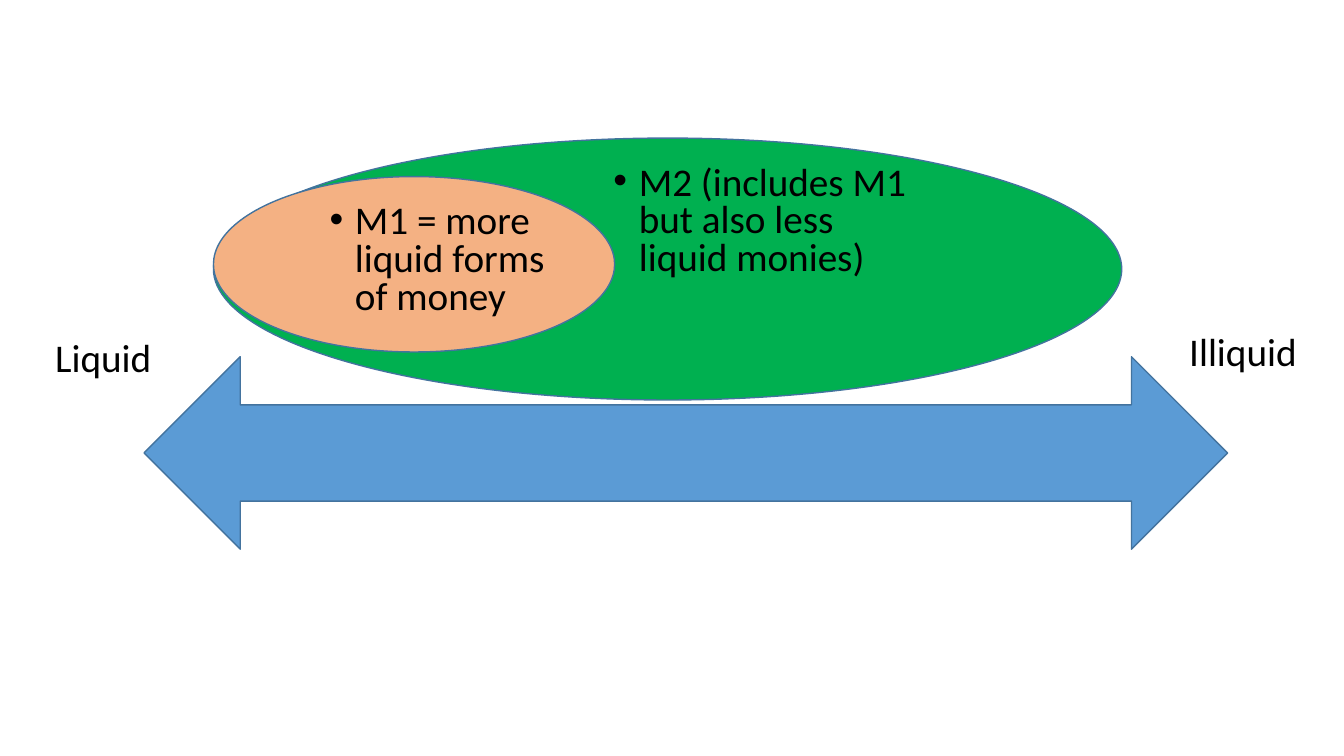
import pptx
import pptx.util
import pptx.dml.color
import pptx.enum.shapes
import pptx.enum.text
import pptx.oxml.ns
import lxml.etree
from dataclasses import dataclass

Cm, Pt = pptx.util.Cm, pptx.util.Pt
RGB = pptx.dml.color.RGBColor.from_string
SHAPE = pptx.enum.shapes.MSO_SHAPE


@dataclass
class Theme:
    font: str = "Calibri"
    size: int = 28
    text: str = "000000"
    outline: str = "43739E"
    m1: str = "F4B183"
    m2: str = "00B050"
    arrow: str = "5B9BD5"


theme = Theme()


def write_text(tf, text, bullet=False, spacing=None, wrap=True):
    tf.word_wrap = wrap
    tf.auto_size = pptx.enum.text.MSO_AUTO_SIZE.NONE
    tf.vertical_anchor = pptx.enum.text.MSO_ANCHOR.TOP
    p = tf.paragraphs[0]
    p.text = text
    if bullet:
        pPr = p._p.get_or_add_pPr()
        pPr.set("marL", str(Cm(0.64)))
        pPr.set("indent", str(-Cm(0.64)))
        bu_font = lxml.etree.SubElement(pPr, pptx.oxml.ns.qn("a:buFont"))
        bu_font.set("typeface", "Arial")
        lxml.etree.SubElement(pPr, pptx.oxml.ns.qn("a:buChar")).set("char", "•")
    p.alignment = pptx.enum.text.PP_ALIGN.LEFT
    p.space_before = Pt(0)
    if spacing:
        p.line_spacing = spacing
    font = p.runs[0].font
    font.name = theme.font
    font.size = Pt(theme.size)
    font.color.rgb = RGB(theme.text)


prs = pptx.Presentation()
prs.slide_width, prs.slide_height = Cm(33.87), Cm(19.05)
s = prs.slides.add_slide(prs.slide_layouts[1])
title, m1_text = s.placeholders
title.element.getparent().remove(title.element)

# Money ellipses and liquidity arrow
diagram = [
    (SHAPE.OVAL, theme.m2, 5.38, 3.48, 22.89, 6.6),
    (SHAPE.OVAL, theme.m1, 5.38, 4.45, 10.11, 4.42),
    (SHAPE.LEFT_RIGHT_ARROW, theme.arrow, 3.63, 8.99, 27.31, 4.85),
]
for kind, fill, *box in diagram:
    sp = s.shapes.add_shape(kind, *map(Cm, box))
    sp.shadow.inherit = False
    sp.fill.solid()
    sp.fill.fore_color.rgb = RGB(fill)
    sp.line.color.rgb = RGB(theme.outline)
    sp.line.width = Pt(1)

# M1 description, in front of the ellipses
sp.element.addnext(m1_text.element)
m1_text.left, m1_text.top = Cm(8.05), Cm(5.03)
m1_text.width, m1_text.height = Cm(6.5), Cm(3.35)
write_text(m1_text.text_frame, "M1 = more liquid forms of money",
           bullet=True, spacing=0.8)

# M2 description
m2_text = s.shapes.add_textbox(Cm(15.21), Cm(4.06), Cm(8.36), Cm(3.35))
write_text(m2_text.text_frame, "M2 (includes M1 but also less liquid monies)",
           bullet=True, spacing=0.8)

# Labels at the arrow ends
for label, left, top, width in [("Liquid", 1.14, 8.28, 5.74),
                                ("Illiquid", 29.72, 8.13, 4.15)]:
    tb = s.shapes.add_textbox(Cm(left), Cm(top), Cm(width), Cm(1.45))
    write_text(tb.text_frame, label)

prs.save("out.pptx")
